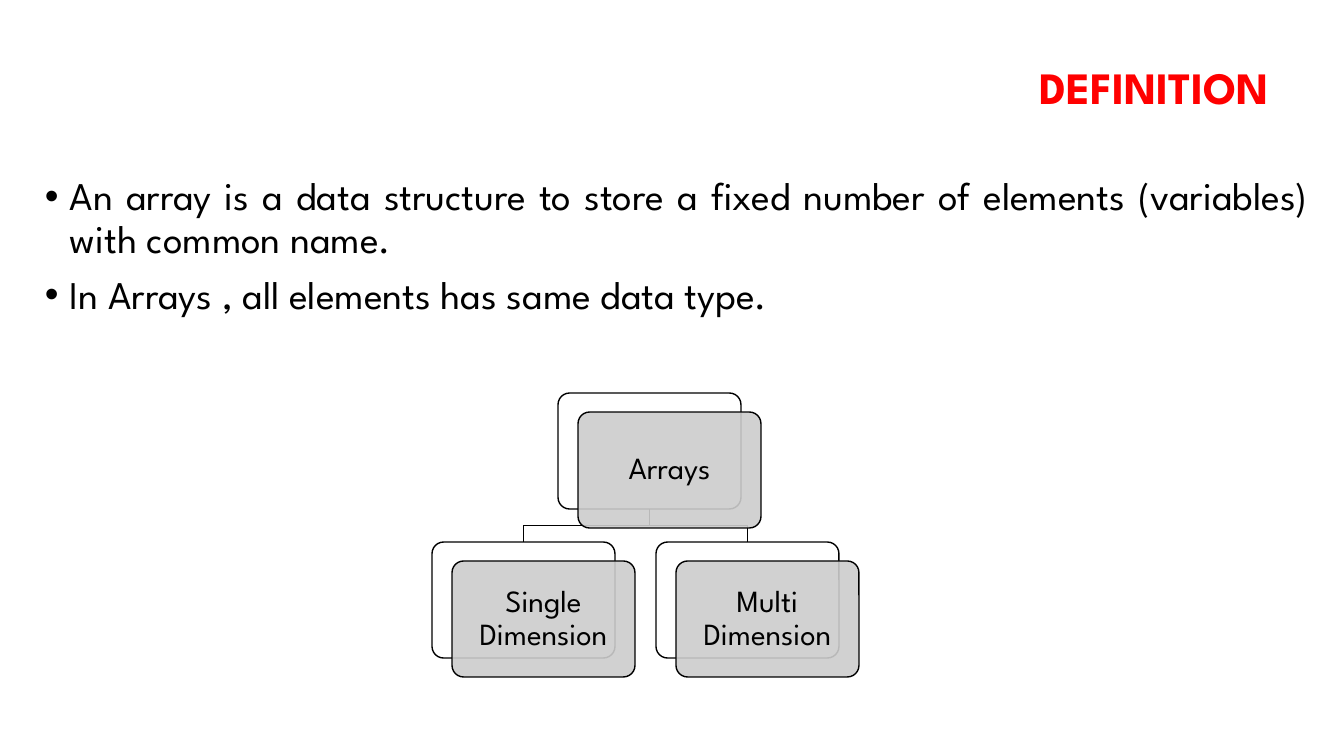
from lxml import etree
from pptx import Presentation
from pptx.dml.color import RGBColor
from pptx.enum.shapes import MSO_SHAPE
from pptx.enum.text import MSO_ANCHOR, PP_ALIGN
from pptx.oxml.ns import qn
from pptx.util import Pt

ROUNDED = MSO_SHAPE.ROUNDED_RECTANGLE
MIDDLE, TOP = MSO_ANCHOR.MIDDLE, MSO_ANCHOR.TOP
LEFT_RIGHT = PP_ALIGN.JUSTIFY
CENTER, RIGHT = PP_ALIGN.CENTER, PP_ALIGN.RIGHT

# Content
HEADING = "DEFINITION"
POINTS = [
    "An array is a data structure to store a fixed number of elements (variables) with common name.",
    "In Arrays , all elements has same data type. ",
]
ROOT = "Arrays"
BRANCHES = ["Single Dimension", "Multi Dimension"]

# Style and layout, lengths in px
FONT = "League Spartan"
COLORS = {"heading": "FF0000", "ink": "000000", "back": "FFFFFF", "card": "CCCCCC"}
EMU_PER_PX = 914400 / 100.8
SLIDE_W, SLIDE_H = 1344, 756
HEADING_BOX = (330, 19, 949, 142)
POINTS_BOX = (35, 172, 1283, 401)
NODE_W, NODE_H = 183, 116
CARD_DX, CARD_DY = 20, 19
ROOT_X, ROOT_Y = 558, 393
BRANCH_X, BRANCH_Y, BRANCH_STEP = 432, 542, 224
CARD_INSET = 13
BULLET_INDENT = 25


def px(length):
    return round(length * EMU_PER_PX)


def color(name):
    return RGBColor.from_string(COLORS[name])


def style(paragraph, size, ink, align, bold=False):
    paragraph.alignment = align
    paragraph.line_spacing = 0.9
    for run in paragraph.runs:
        run.font.name = FONT
        run.font.size = Pt(size)
        run.font.bold = bold
        run.font.color.rgb = color(ink)


def add_text_area(box, anchor):
    frame = slide.shapes.add_textbox(*map(px, box)).text_frame
    frame.word_wrap = True
    frame.vertical_anchor = anchor
    return frame


def add_bullet(paragraph):
    properties = paragraph._p.get_or_add_pPr()
    properties.set("marL", str(px(BULLET_INDENT)))
    properties.set("indent", str(-px(BULLET_INDENT)))
    etree.SubElement(properties, qn("a:buFont")).set("typeface", "Arial")
    etree.SubElement(properties, qn("a:buChar")).set("char", "•")


def outline(shape):
    shape.shadow.inherit = False
    shape.line.color.rgb = color("ink")
    shape.line.width = Pt(1)


def add_panel(x, y, fill):
    panel = slide.shapes.add_shape(ROUNDED, px(x), px(y), px(NODE_W), px(NODE_H))
    panel.adjustments[0] = 0.1
    panel.fill.solid()
    panel.fill.fore_color.rgb = color(fill)
    outline(panel)
    return panel


def add_node(x, y, label):
    add_panel(x, y, "back")
    card = add_panel(x + CARD_DX, y + CARD_DY, "card")
    tint = card.fill._xPr.find(qn("a:solidFill"))[0]
    etree.SubElement(tint, qn("a:alpha")).set("val", "90000")
    frame = card.text_frame
    frame.word_wrap = True
    frame.vertical_anchor = MIDDLE
    frame.margin_left = frame.margin_right = px(CARD_INSET)
    frame.margin_top = frame.margin_bottom = px(CARD_INSET)
    frame.text = label
    style(frame.paragraphs[0], 22, "ink", CENTER)


def add_branch_line(x):
    start_x, start_y = ROOT_X + NODE_W / 2, ROOT_Y + NODE_H
    end_x = x + NODE_W / 2
    bend_y = (start_y + BRANCH_Y) / 2
    builder = slide.shapes.build_freeform(px(start_x), px(start_y))
    corners = [(start_x, bend_y), (end_x, bend_y), (end_x, BRANCH_Y)]
    builder.add_line_segments([(px(a), px(b)) for a, b in corners], close=False)
    branch_line = builder.convert_to_shape()
    branch_line.fill.background()
    outline(branch_line)


presentation = Presentation()
presentation.slide_width, presentation.slide_height = px(SLIDE_W), px(SLIDE_H)
slide = presentation.slides.add_slide(presentation.slide_layouts[6])

# Heading
heading = add_text_area(HEADING_BOX, MIDDLE)
heading.text = HEADING
style(heading.paragraphs[0], 32, "heading", RIGHT, bold=True)

# Bullet points
points = add_text_area(POINTS_BOX, TOP)
points.text = "\n".join(POINTS)
for index, point in enumerate(points.paragraphs):
    add_bullet(point)
    style(point, 28, "ink", LEFT_RIGHT)
    point.space_before = Pt(10 if index else 0)

# Array types: lines first, so the cards cover them
branch_xs = [BRANCH_X + i * BRANCH_STEP for i in range(len(BRANCHES))]
for branch_x in branch_xs:
    add_branch_line(branch_x)
add_node(ROOT_X, ROOT_Y, ROOT)
for branch_x, branch in zip(branch_xs, BRANCHES):
    add_node(branch_x, BRANCH_Y, branch)

presentation.save("out.pptx")
